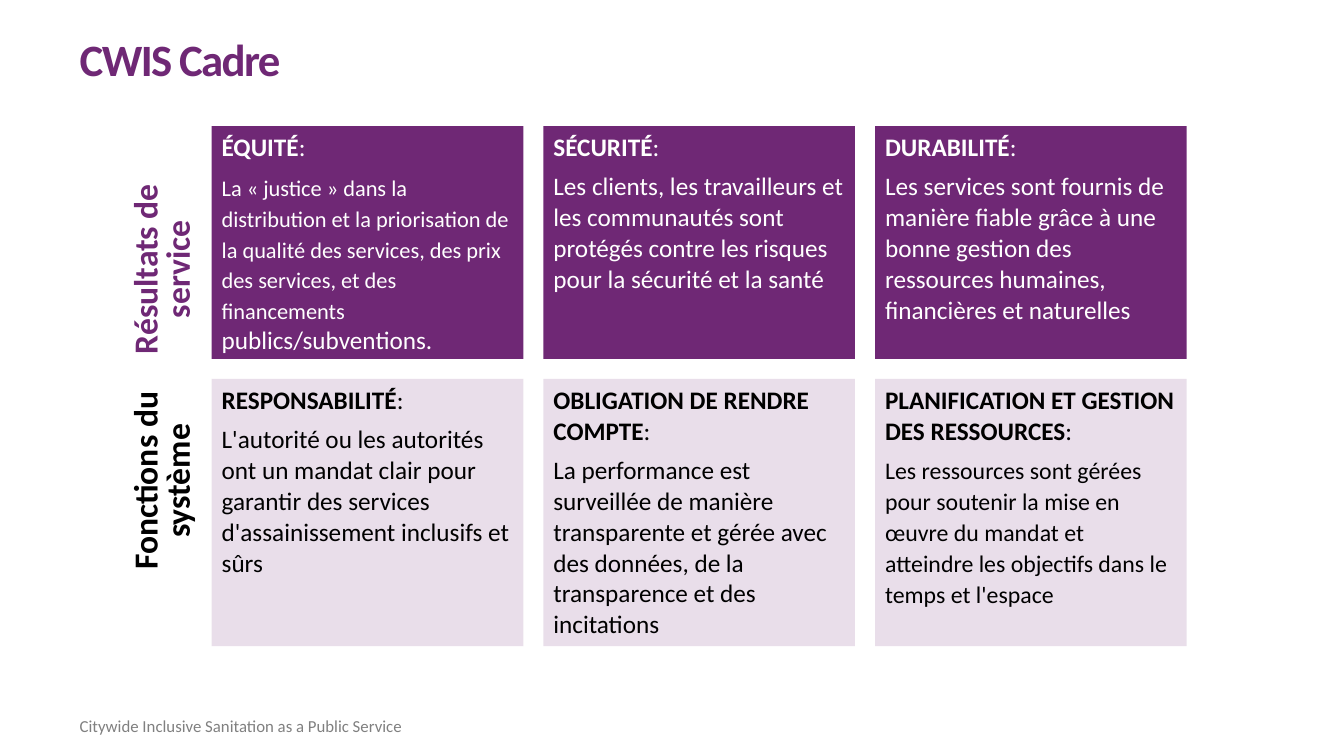
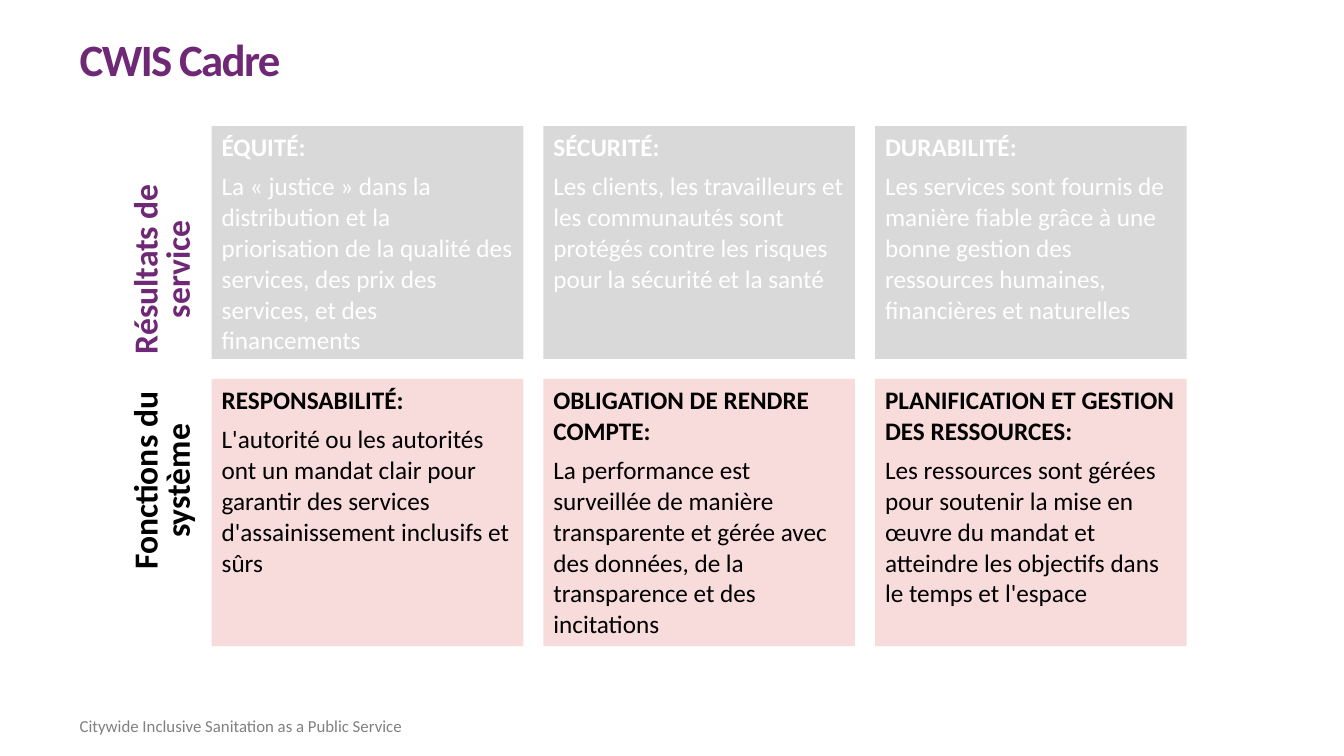
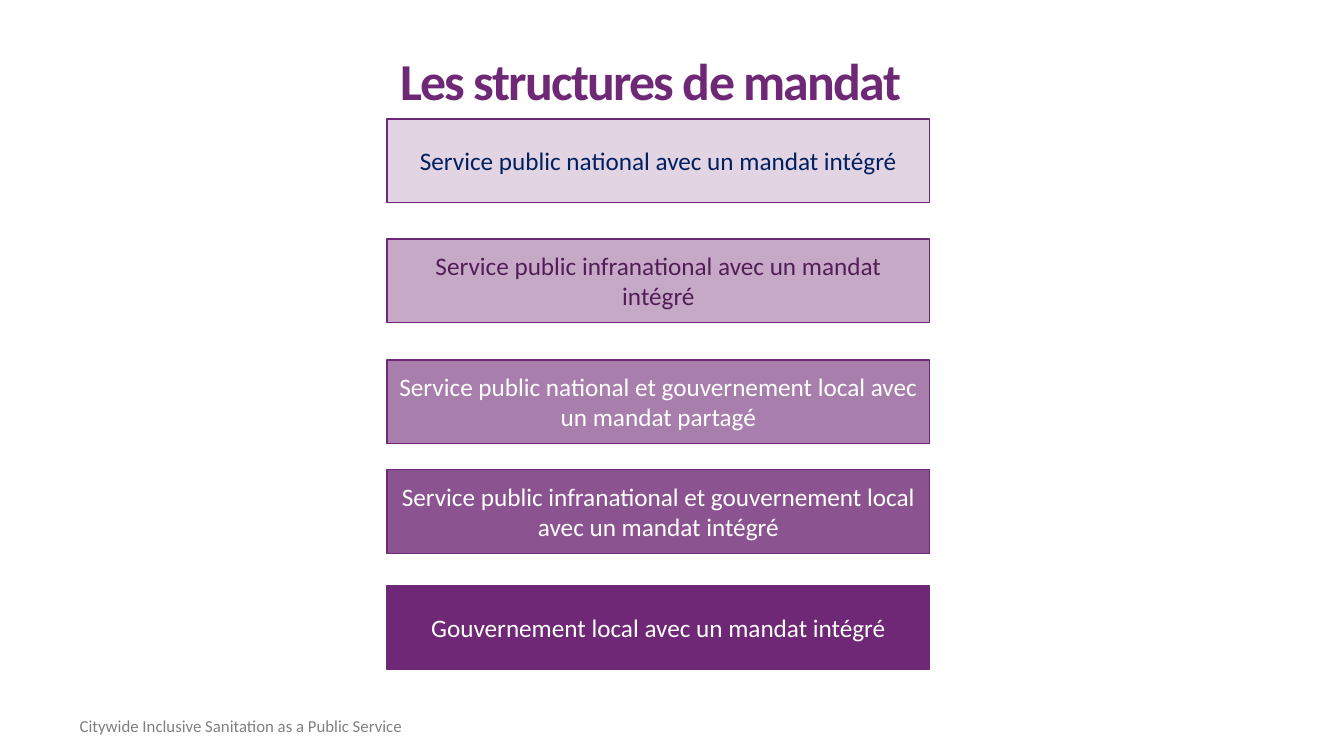
from lxml import etree
from pptx import Presentation
from pptx.dml.color import RGBColor
from pptx.enum.shapes import MSO_SHAPE
from pptx.enum.text import MSO_ANCHOR, MSO_AUTO_SIZE, PP_ALIGN
from pptx.oxml.ns import qn
from pptx.util import Inches, Pt

# Shared style
FONT = "Calibri"
PURPLE, WHITE, BLACK, GREY, RED = "6F2875", "FFFFFF", "000000", "D9D9D9", "D31312"
FOOTER = "Citywide Inclusive Sanitation as a Public Service"
NO_MARGINS = (0, 0, 0, 0)
BOX_MARGINS = (0.1, 0.05, 0.1, 0.05)

# Framework content: row label, then (heading, body) for each column
FRAMEWORK = [
    ("Résultats de service", [
        ("ÉQUITÉ", "La « justice » dans la distribution et la priorisation de la qualité "
                   "des services, des prix des services, et des financements "),
        ("SÉCURITÉ", "Les clients, les travailleurs et les communautés sont protégés "
                     "contre les risques pour la sécurité et la santé"),
        ("DURABILITÉ", "Les services sont fournis de manière fiable grâce à une bonne "
                       "gestion des ressources humaines, financières et naturelles"),
    ]),
    ("Fonctions du système", [
        ("RESPONSABILITÉ", "L'autorité ou les autorités ont un mandat clair pour garantir "
                           "des services d'assainissement inclusifs et sûrs"),
        ("OBLIGATION DE RENDRE COMPTE",
         "La performance est surveillée de manière transparente et gérée avec des données, "
         "de la transparence et des incitations"),
        ("PLANIFICATION ET GESTION DES RESSOURCES",
         "Les ressources sont gérées pour soutenir la mise en œuvre du mandat et atteindre "
         "les objectifs dans le temps et l'espace"),
    ]),
]
BODY_ENDINGS = {"ÉQUITÉ": "publics/subventions."}

# Framework grid: (top, height, label top, label colour, text colour) for each row
GRID_ROWS = [(1.25, 2.31, 2.2, PURPLE, WHITE), (3.76, 2.65, 4.3, BLACK, BLACK)]
GRID_LEFT, COLUMN_PITCH, COLUMN_WIDTH = 2.1, 3.29, 3.09

# One entry per framework slide: (colour, opacity) of each row, and text variations
FRAMEWORK_SLIDES = [
    {"fills": [(PURPLE, 100), (PURPLE, 15)], "bold_accents": False, "body_gap": 0,
     "body_sizes": {"ÉQUITÉ": 16, "PLANIFICATION ET GESTION DES RESSOURCES": 17}},
    {"fills": [(GREY, 100), (RED, 15)], "bold_accents": True, "body_gap": 6,
     "body_sizes": {}},
]

# Mandate structures: (top, opacity, text colour, text)
MANDATES = [
    (1.18, 20, "002060", "Service public national avec un mandat intégré"),
    (2.37, 40, "531E58", "Service public infranational avec un mandat intégré"),
    (3.57, 60, WHITE, "Service public national et gouvernement local avec un mandat partagé"),
    (4.66, 80, WHITE, "Service public infranational et gouvernement local avec un mandat intégré"),
    (5.81, 100, WHITE, "Gouvernement local avec un mandat intégré"),
]


def color(hex_string):
    return RGBColor.from_string(hex_string)


def place(shape, left, top, width, height):
    shape.left, shape.top = Inches(left), Inches(top)
    shape.width, shape.height = Inches(width), Inches(height)


def set_frame(shape, margins, anchor=MSO_ANCHOR.TOP):
    frame = shape.text_frame
    frame.word_wrap = True
    frame.auto_size = MSO_AUTO_SIZE.NONE
    frame.vertical_anchor = anchor
    (frame.margin_left, frame.margin_top,
     frame.margin_right, frame.margin_bottom) = map(Inches, margins)
    return frame


def write(para, spans, hex_string, align=PP_ALIGN.LEFT, line=None, after=0):
    """Fill a paragraph with (text, size, bold) spans."""
    para.alignment, para.line_spacing, para.space_after = align, line, Pt(after)
    for text, size, bold in spans:
        span = para.add_run()
        span.text = text
        span.font.name, span.font.size, span.font.bold = FONT, Pt(size), bold
        span.font.color.rgb = color(hex_string)


def add_box(page, at, fill, opacity=100, outline=None):
    box = page.shapes.add_shape(MSO_SHAPE.RECTANGLE, *map(Inches, at))
    box.shadow.inherit = False
    box.fill.solid()
    box.fill.fore_color.rgb = color(fill)
    if opacity < 100:
        fill_color = box.element.spPr.find(qn("a:solidFill"))[0]
        etree.SubElement(fill_color, qn("a:alpha"), val=str(opacity * 1000))
    if outline:
        box.line.color.rgb = color(outline)
        box.line.width = Pt(1)
    else:
        box.line.fill.background()
    return box


def add_title(page, text, at, size, line, margins=NO_MARGINS,
              align=PP_ALIGN.LEFT, anchor=MSO_ANCHOR.TOP):
    title = page.shapes.title
    place(title, *at)
    para = set_frame(title, margins, anchor).paragraphs[0]
    write(para, [(text, size, True)], PURPLE, align, line)
    for properties in title.element.iter(qn("a:rPr")):
        properties.set("spc", "-120")


def add_footer(layout, page):
    """Draw the footer and move it to the layout, where every slide shows it."""
    footer = page.shapes.add_textbox(0, 0, 0, 0)
    place(footer, 0.79, 7.1, 7.42, 0.38)
    write(set_frame(footer, NO_MARGINS).paragraphs[0], [(FOOTER, 12, False)], "808080")
    layout.shapes.element.append(footer.element)


def add_row_label(page, text, top, hex_string):
    label = page.shapes.add_textbox(0, 0, 0, 0)
    place(label, 0.66, top, 1.94, 0.94)
    label.rotation = 270
    para = set_frame(label, NO_MARGINS, MSO_ANCHOR.MIDDLE).paragraphs[0]
    write(para, [(text, 24, True)], hex_string, PP_ALIGN.CENTER, Pt(23))


def build_framework(page, look):
    add_title(page, "CWIS Cadre", (0.79, 0.4, 5.62, 0.57), 32, 0.85)
    accent = look["bold_accents"]
    for (label, cells), row, fill in zip(FRAMEWORK, GRID_ROWS, look["fills"]):
        top, height, label_top, label_color, text_color = row
        add_row_label(page, label, label_top, label_color)
        for column, (heading, body) in enumerate(cells):
            left = GRID_LEFT + column * COLUMN_PITCH
            box = add_box(page, (left, top, COLUMN_WIDTH, height), *fill)
            frame = set_frame(box, BOX_MARGINS)
            write(frame.paragraphs[0], [(heading, 18, True), (":", 18, accent)],
                  text_color, line=Pt(22), after=6)
            spans = [(body, look["body_sizes"].get(heading, 18), False)]
            if heading in BODY_ENDINGS:
                spans.append((BODY_ENDINGS[heading], 18, accent))
            write(frame.add_paragraph(), spans, text_color,
                  line=Pt(22), after=look["body_gap"])


def build_mandates(page):
    add_title(page, "Les structures de mandat", (3.69, 0, 5.53, 1.19), 37, 0.8,
              (0.1, 0.55, 0.1, 0.05), PP_ALIGN.CENTER, MSO_ANCHOR.MIDDLE)
    for top, opacity, text_color, text in MANDATES:
        box = add_box(page, (3.84, top, 5.38, 0.83), PURPLE, opacity, PURPLE)
        para = set_frame(box, BOX_MARGINS, MSO_ANCHOR.MIDDLE).paragraphs[0]
        write(para, [(text, 18, False)], text_color, PP_ALIGN.CENTER)


def main():
    deck = Presentation()
    deck.slide_width, deck.slide_height = Inches(13.33), Inches(7.5)
    layout = deck.slide_layouts.get_by_name("Title Only")
    for look in FRAMEWORK_SLIDES:
        build_framework(deck.slides.add_slide(layout), look)
    mandate_page = deck.slides.add_slide(layout)
    build_mandates(mandate_page)
    add_footer(layout, mandate_page)
    deck.save("out.pptx")


if __name__ == "__main__":
    main()
